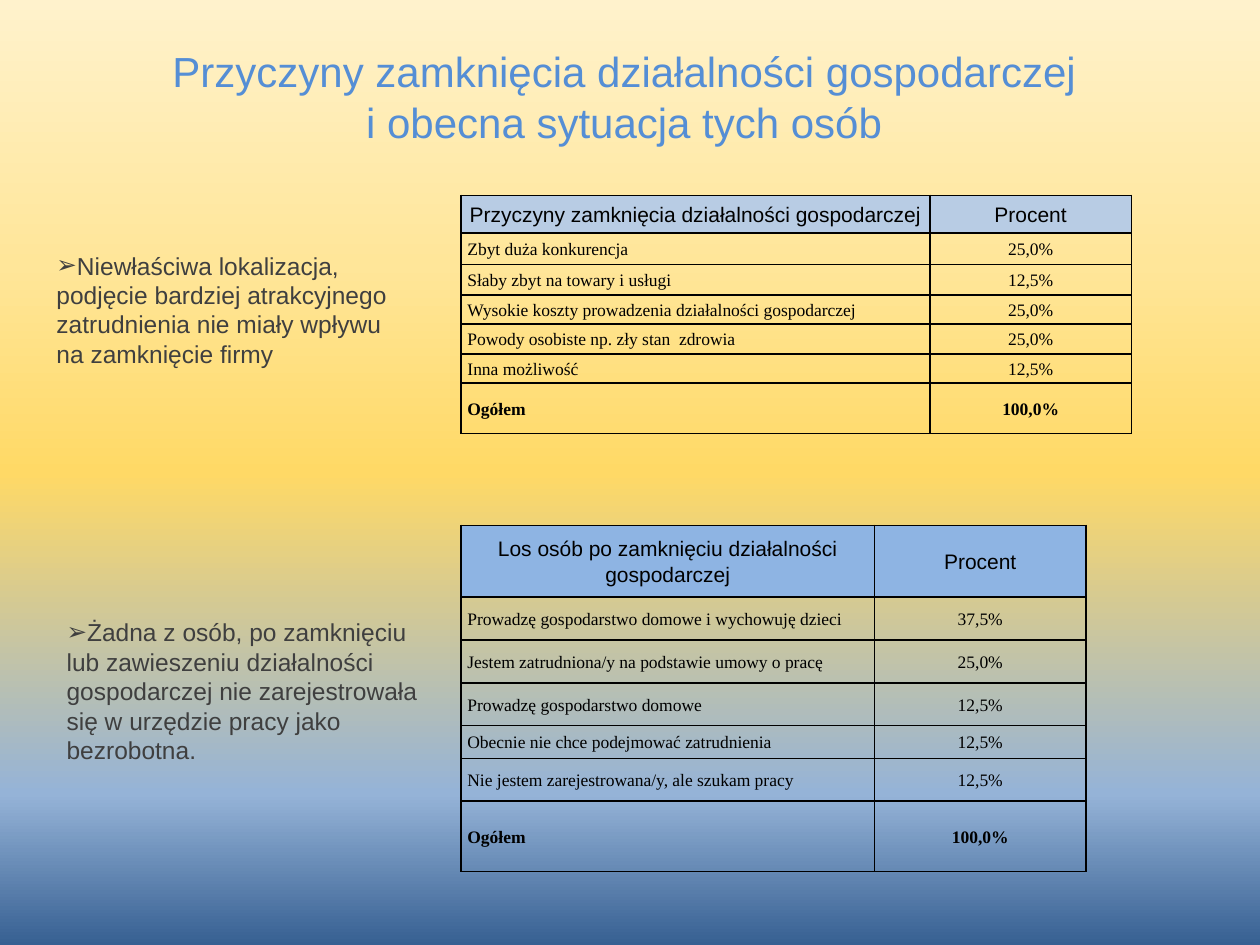
from lxml import etree
from pptx import Presentation
from pptx import util as u
from pptx.dml import color
from pptx.enum import text
from pptx.oxml import ns, parse_xml

HEX = {"title": "558ED5", "body": "3F3F3F", "ink": "000000",
       "pale": "B8CCE4", "blue": "8EB4E3"}
SKY = [(0, "FFF2CC"), (28, "FFE699"), (50, "FFD966"),
       (84, "95B3D7"), (100, "376092")]

HEAD = {"name": "Arial", "size": u.Pt(12)}
ROW = {"name": "Times New Roman", "size": u.Pt(10)}
TOTAL = {**ROW, "bold": True}
NOTE = {"name": "Arial", "size": u.Pt(14)}
TITLE = {"name": "Arial", "size": u.Pt(24)}

MID = text.MSO_ANCHOR.MIDDLE
LEFT, CENTER = text.PP_ALIGN.LEFT, text.PP_ALIGN.CENTER

CAUSES = [
    ("Przyczyny zamknięcia działalności gospodarczej", "Procent"),
    ("Zbyt duża konkurencja", "25,0%"),
    ("Słaby zbyt na towary i usługi", "12,5%"),
    ("Wysokie koszty prowadzenia działalności gospodarczej", "25,0%"),
    ("Powody osobiste np. zły stan  zdrowia", "25,0%"),
    ("Inna możliwość", "12,5%"),
    ("Ogółem", "100,0%"),
]
FATES = [
    ("Los osób po zamknięciu działalności gospodarczej", "Procent"),
    ("Prowadzę gospodarstwo domowe i wychowuję dzieci", "37,5%"),
    ("Jestem zatrudniona/y na podstawie umowy o pracę", "25,0%"),
    ("Prowadzę gospodarstwo domowe", "12,5%"),
    ("Obecnie nie chce podejmować zatrudnienia", "12,5%"),
    ("Nie jestem zarejestrowana/y, ale szukam pracy", "12,5%"),
    ("Ogółem", "100,0%"),
]


def rgb(key):
    return color.RGBColor.from_string(HEX[key])


def write(para, words, font, tint, align=LEFT):
    para.text = words
    para.alignment = align
    for run in para.runs:
        for key, value in font.items():
            setattr(run.font, key, value)
        run.font.color.rgb = rgb(tint)


def paint_back(slide):
    fill = slide.background.fill
    fill.gradient()
    fill.gradient_angle = 270  # top to bottom
    stops = slide.background._cSld.find(".//" + ns.qn("a:gsLst"))
    for old in list(stops):
        stops.remove(old)
    for pos, shade in SKY:
        stop = etree.SubElement(stops, ns.qn("a:gs"), pos=str(pos * 1000))
        etree.SubElement(stop, ns.qn("a:srgbClr"), val=shade)


def add_text(slide, box, words, font, tint, align=LEFT):
    frame = slide.shapes.add_textbox(*map(u.Inches, box)).text_frame
    frame.word_wrap = True
    write(frame.paragraphs[0], words, font, tint, align)
    return frame


def add_title(slide, box, words):
    add_text(slide, box, words, TITLE, "title", CENTER).vertical_anchor = MID


def add_note(slide, box, words):
    frame = add_text(slide, box, words, NOTE, "body")
    props = frame.paragraphs[0]._p.get_or_add_pPr()
    props.set("marL", "0")
    props.set("indent", "0")
    etree.SubElement(props, ns.qn("a:buFont"), typeface="Wingdings 3")
    props[-1].set("typeface", "Arial")
    etree.SubElement(props, ns.qn("a:buChar"), char="➢")


def add_edges(cell):
    props = cell._tc.get_or_add_tcPr()
    for side in "LRTB":
        props.append(parse_xml(
            f'<a:ln{side} {ns.nsdecls("a")} w="12700"><a:solidFill>'
            f'<a:srgbClr val="{HEX["ink"]}"/></a:solidFill></a:ln{side}>'))


def add_grid(slide, left, top, widths, heights, rows, shade):
    box = map(u.Inches, (left, top, sum(widths), sum(heights)))
    grid = slide.shapes.add_table(len(rows), len(widths), *box).table
    grid.first_row = grid.horz_banding = False
    for col, width in zip(grid.columns, widths):
        col.width = u.Inches(width)
    edge = u.Inches(0.05)
    form = {"vertical_anchor": MID, "margin_left": edge, "margin_right": edge,
            "margin_top": 0, "margin_bottom": 0}
    for r, row in enumerate(rows):
        grid.rows[r].height = u.Inches(heights[r])
        font = HEAD if r == 0 else TOTAL if r == len(rows) - 1 else ROW
        for c, words in enumerate(row):
            cell = grid.cell(r, c)
            for key, value in form.items():
                setattr(cell, key, value)
            add_edges(cell)
            if r == 0:
                cell.fill.solid()
                cell.fill.fore_color.rgb = rgb(shade)
            else:
                cell.fill.background()
            para = cell.text_frame.paragraphs[0]
            write(para, words, font, "ink", CENTER if r == 0 or c else LEFT)
            para.line_spacing = 1.1


def main():
    deck = Presentation()
    deck.slide_width, deck.slide_height = u.Inches(10), u.Inches(7.5)
    slide = deck.slides.add_slide(deck.slide_layouts[6])
    paint_back(slide)

    add_title(slide, (0.5, 0.3, 9, 0.93),
              "Przyczyny zamknięcia działalności gospodarczej \v"
              "i obecna sytuacja tych osób ")

    # Tables
    add_grid(slide, 3.66, 1.55, (3.72, 1.6),
             (0.3, 0.25, 0.24, 0.23, 0.24, 0.23, 0.4), CAUSES, "pale")
    add_grid(slide, 3.66, 4.17, (3.28, 1.68),
             (0.57, 0.34, 0.34, 0.34, 0.26, 0.34, 0.56), FATES, "blue")

    # Remarks
    add_note(slide, (0.35, 1.94, 2.93, 1.04),
             "Niewłaściwa lokalizacja, podjęcie bardziej atrakcyjnego "
             "zatrudnienia nie miały wpływu na zamknięcie firmy")
    add_note(slide, (0.43, 4.85, 2.99, 1.28),
             "Żadna z osób, po zamknięciu lub zawieszeniu działalności "
             "gospodarczej nie zarejestrowała się w urzędzie pracy jako "
             "bezrobotna.")

    deck.save("out.pptx")


if __name__ == "__main__":
    main()
